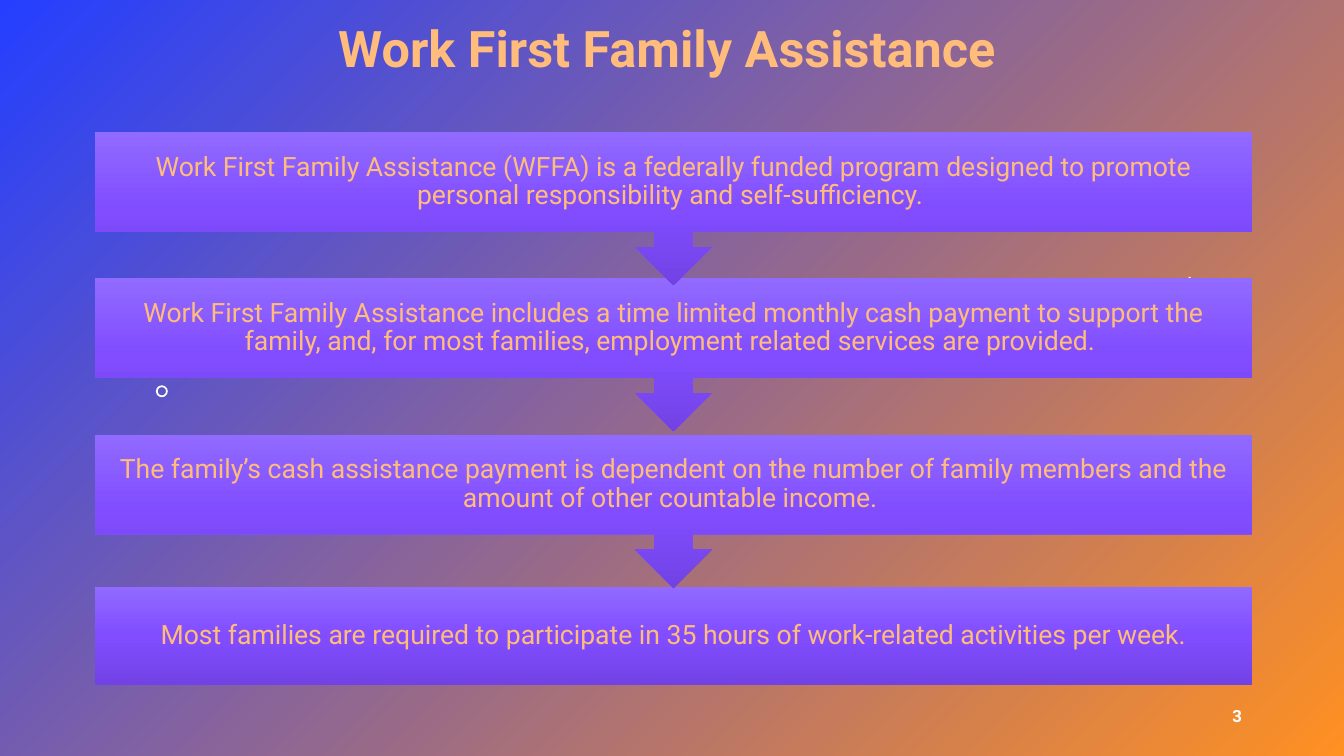
from copy import deepcopy
from dataclasses import dataclass

from pptx import Presentation
from pptx.dml.color import RGBColor
from pptx.enum.shapes import MSO_SHAPE
from pptx.enum.text import MSO_ANCHOR, PP_ALIGN
from pptx.oxml.ns import qn
from pptx.util import Cm, Pt

RECT = MSO_SHAPE.RECTANGLE
CALLOUT = MSO_SHAPE.DOWN_ARROW_CALLOUT
DONUT = MSO_SHAPE.DONUT
PLUS = MSO_SHAPE.CROSS
TOP, MIDDLE = MSO_ANCHOR.TOP, MSO_ANCHOR.MIDDLE
CENTER, RIGHT = PP_ALIGN.CENTER, PP_ALIGN.RIGHT


@dataclass(frozen=True)
class Theme:
    font: str = "Roboto"
    peach: str = "FFBC7A"
    white: str = "FFFFFF"
    background: tuple = ("243FFF", "FF9022")
    step: tuple = ("916AFF", "814DFF", "7242E5")
    title_size: float = 36
    step_size: float = 19
    number_size: float = 12


@dataclass(frozen=True)
class Step:
    kind: int
    top: float
    height: float
    text: str


@dataclass(frozen=True)
class Ornament:
    kind: int
    left: float
    top: float
    size: float
    thickness: float


THEME = Theme()
STEP_LEFT, STEP_WIDTH, STEP_INSET = 2.39, 29.16, 0.38

STEPS = [
    Step(RECT, 14.78, 2.49,
         "Most families are required to participate in 35 hours of "
         "work-related activities per week."),
    Step(CALLOUT, 10.95, 3.86,
         "The family’s cash assistance payment is dependent on the number of "
         "family members and the amount of other countable income. "),
    Step(CALLOUT, 7.01, 3.86,
         "Work First Family Assistance includes a time limited monthly cash "
         "payment to support the family, and, for most families, employment "
         "related services are provided. "),
    Step(CALLOUT, 3.33, 3.86,
         "Work First Family Assistance (WFFA) is a federally funded program "
         "designed to promote personal responsibility and self-sufficiency. "),
]

ORNAMENTS = [
    Ornament(PLUS, 29.79, 6.98, 0.38, 0.43),
    Ornament(DONUT, 3.93, 9.71, 0.3, 0.15),
]


def paint_gradient(fill, element, colors: tuple, angle: float) -> None:
    fill.gradient()
    fill.gradient_angle = angle
    stop_list = next(element.iter(qn("a:gsLst")))
    for _ in colors[2:]:
        stop_list.append(deepcopy(stop_list[-1]))
    for i, (stop, color) in enumerate(zip(fill.gradient_stops, colors)):
        stop.color.rgb = RGBColor.from_string(color)
        stop.position = i / (len(colors) - 1)


def write_text(tf, text: str, *, size: float, color: str, align=CENTER,
               anchor=TOP, bold: bool = False, spacing: float = 1.0) -> None:
    tf.word_wrap = True
    tf.vertical_anchor = anchor
    p = tf.paragraphs[0]
    p.alignment = align
    p.line_spacing = spacing
    r = p.add_run()
    r.text = text
    r.font.name = THEME.font
    r.font.size = Pt(size)
    r.font.bold = bold
    r.font.color.rgb = RGBColor.from_string(color)


def add_plain_shape(s, kind: int, left: float, top: float, width: float, height: float):
    sp = s.shapes.add_shape(kind, Cm(left), Cm(top), Cm(width), Cm(height))
    sp.shadow.inherit = False
    sp.line.fill.background()
    return sp


def add_ornament(s, ornament: Ornament) -> None:
    sp = add_plain_shape(s, ornament.kind, ornament.left, ornament.top,
                         ornament.size, ornament.size)
    sp.adjustments[0] = ornament.thickness
    sp.fill.solid()
    sp.fill.fore_color.rgb = RGBColor.from_string(THEME.white)


def add_step(s, step: Step) -> None:
    sp = add_plain_shape(s, step.kind, STEP_LEFT, step.top, STEP_WIDTH, step.height)
    paint_gradient(sp.fill, sp.element, THEME.step, 270)
    tf = sp.text_frame
    tf.margin_left = tf.margin_right = Cm(STEP_INSET)
    tf.margin_top = tf.margin_bottom = Cm(STEP_INSET)
    write_text(tf, step.text, size=THEME.step_size, color=THEME.peach,
               anchor=MIDDLE, spacing=0.9)


def main() -> None:
    prs = Presentation()
    prs.slide_width, prs.slide_height = Cm(33.87), Cm(19.05)
    s = prs.slides.add_slide(prs.slide_layouts[6])
    paint_gradient(s.background.fill, s.element, THEME.background, 315)

    for ornament in ORNAMENTS:
        add_ornament(s, ornament)

    title = s.shapes.add_textbox(Cm(0.3), Cm(0.48), Cm(33.02), Cm(4.39))
    write_text(title.text_frame, "Work First Family Assistance",
               size=THEME.title_size, color=THEME.peach, bold=True, spacing=0.9)

    for step in STEPS:
        add_step(s, step)

    number = s.shapes.add_textbox(Cm(23.93), Cm(17.65), Cm(7.62), Cm(1.02))
    write_text(number.text_frame, "3", size=THEME.number_size,
               color=THEME.white, align=RIGHT, bold=True)

    prs.save("out.pptx")


if __name__ == "__main__":
    main()
